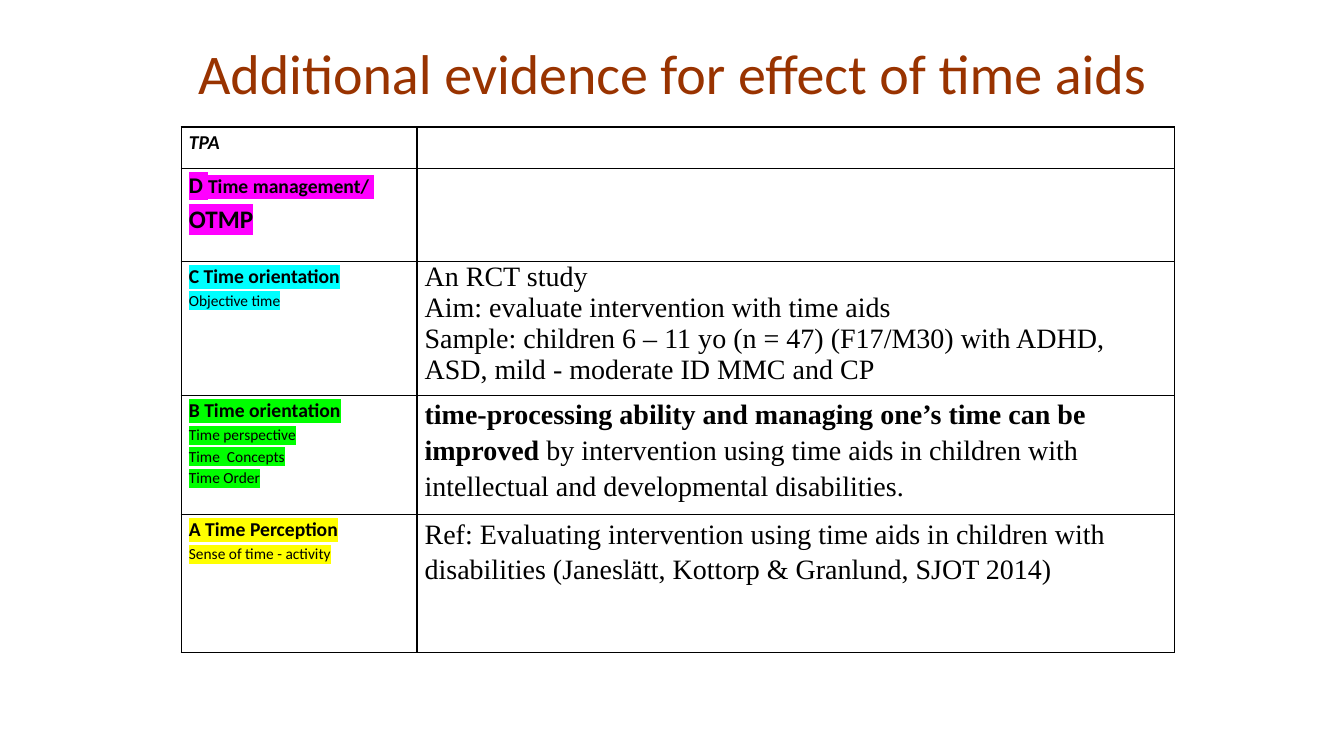
from lxml.etree import SubElement
from pptx import Presentation
from pptx.dml.color import RGBColor
from pptx.enum.text import MSO_ANCHOR, MSO_AUTO_SIZE, PP_ALIGN
from pptx.oxml.ns import qn
from pptx.util import Cm, Pt

# Content: each cell is a list of paragraphs, each paragraph a list of (text, format)
COLORS = {"title": "993300", "text": "000000", "magenta": "FF00FF",
          "cyan": "00FFFF", "green": "00FF00", "yellow": "FFFF00"}
TITLE = "Additional evidence for effect of time aids"


def level(heading, details, highlight):
    """Label cell: a bold heading with small lines below it."""
    return [[(heading, dict(size=14, bold=True, highlight=highlight))]] + [
        [(detail, dict(size=11, highlight=highlight))] for detail in details]


BODY = dict(size=20, font="Times New Roman")
MANAGEMENT = dict(bold=True, highlight="magenta")
# Each row: height in cm, label cell, evidence cell, line spacing of the evidence
ROWS = [
    (1.04, [[("TPA", dict(size=14, bold=True, italic=True))]], [], 1.15),
    (2.34, [[("D ", dict(size=16, **MANAGEMENT)),
             ("Time management/ ", dict(size=14, **MANAGEMENT))],
            [("OTMP", dict(size=18, **MANAGEMENT))]], [], 1.15),
    (3.38, level("C Time orientation", ["Objective time"], "cyan"),
     [[("An RCT study", BODY)],
      [("Aim: evaluate intervention with time aids", BODY)],
      [("Sample: children 6 – 11 yo (n = 47) (F17/M30) with ADHD, ASD, "
        "mild - moderate ID MMC and CP", BODY)]], 1.0),
    (3.0, level("B Time orientation",
                ["Time perspective", "Time  Concepts", "Time Order"], "green"),
     [[("time-processing ability and managing one’s time can be improved",
        dict(bold=True, **BODY)),
       (" by intervention using time aids in children with intellectual "
        "and developmental disabilities.", BODY)]], 1.15),
    (3.48, level("A Time Perception", ["Sense of time - activity"], "yellow"),
     [[("Ref: Evaluating intervention using time aids in children with "
        "disabilities (Janeslätt, Kottorp & Granlund, SJOT 2014)", BODY)]], 1.15),
]
COLUMN_WIDTHS = [5.94, 19.08]
TABLE_LEFT, TABLE_TOP = 4.57, 3.2


def add_text(paragraph, text, size=14, font="Calibri", color="text",
             bold=False, italic=False, highlight=None):
    run = paragraph.add_run()
    run.text = text
    run.font.size, run.font.name = Pt(size), font
    run.font.bold, run.font.italic = bold, italic
    run.font.color.rgb = RGBColor.from_string(COLORS[color])
    if highlight:
        properties = run.font._element
        mark = SubElement(properties, qn("a:highlight"))
        SubElement(mark, qn("a:srgbClr"), val=COLORS[highlight])
        properties.find(qn("a:solidFill")).addnext(mark)


def add_borders(cell):
    properties = cell._tc.get_or_add_tcPr()
    for index, side in enumerate(("lnL", "lnR", "lnT", "lnB")):
        line = SubElement(properties, qn(f"a:{side}"), w=str(Pt(1)))
        fill = SubElement(line, qn("a:solidFill"))
        SubElement(fill, qn("a:srgbClr"), val=COLORS["text"])
        properties.insert(index, line)


def fill_cell(cell, paragraphs, spacing):
    cell.margin_left = cell.margin_right = Cm(0.19)
    cell.margin_top = cell.margin_bottom = 0
    cell.vertical_anchor = MSO_ANCHOR.TOP
    cell.fill.background()
    add_borders(cell)
    frame = cell.text_frame
    for index, runs in enumerate(paragraphs):
        paragraph = frame.add_paragraph() if index else frame.paragraphs[0]
        paragraph.line_spacing = spacing
        for text, text_format in runs:
            add_text(paragraph, text, **text_format)


presentation = Presentation()
presentation.slide_width, presentation.slide_height = Cm(33.87), Cm(19.05)
slide = presentation.slides.add_slide(presentation.slide_layouts[5])

# Title
title = slide.shapes.title
title.left, title.top, title.width, title.height = Cm(1.7), Cm(0.84), Cm(30.48), Cm(3.18)
title.text_frame.vertical_anchor = MSO_ANCHOR.TOP
title.text_frame.auto_size = MSO_AUTO_SIZE.NONE
title_paragraph = title.text_frame.paragraphs[0]
title_paragraph.alignment = PP_ALIGN.CENTER
add_text(title_paragraph, TITLE, size=40, color="title")

# Table
table = slide.shapes.add_table(
    len(ROWS), len(COLUMN_WIDTHS), Cm(TABLE_LEFT), Cm(TABLE_TOP),
    Cm(sum(COLUMN_WIDTHS)), Cm(sum(row[0] for row in ROWS))).table
table.first_row = table.horz_banding = False
for column, width in zip(table.columns, COLUMN_WIDTHS):
    column.width = Cm(width)
for index, (height, label, evidence, spacing) in enumerate(ROWS):
    table.rows[index].height = Cm(height)
    fill_cell(table.cell(index, 0), label, 1.15)
    fill_cell(table.cell(index, 1), evidence, spacing)

presentation.save("out.pptx")
